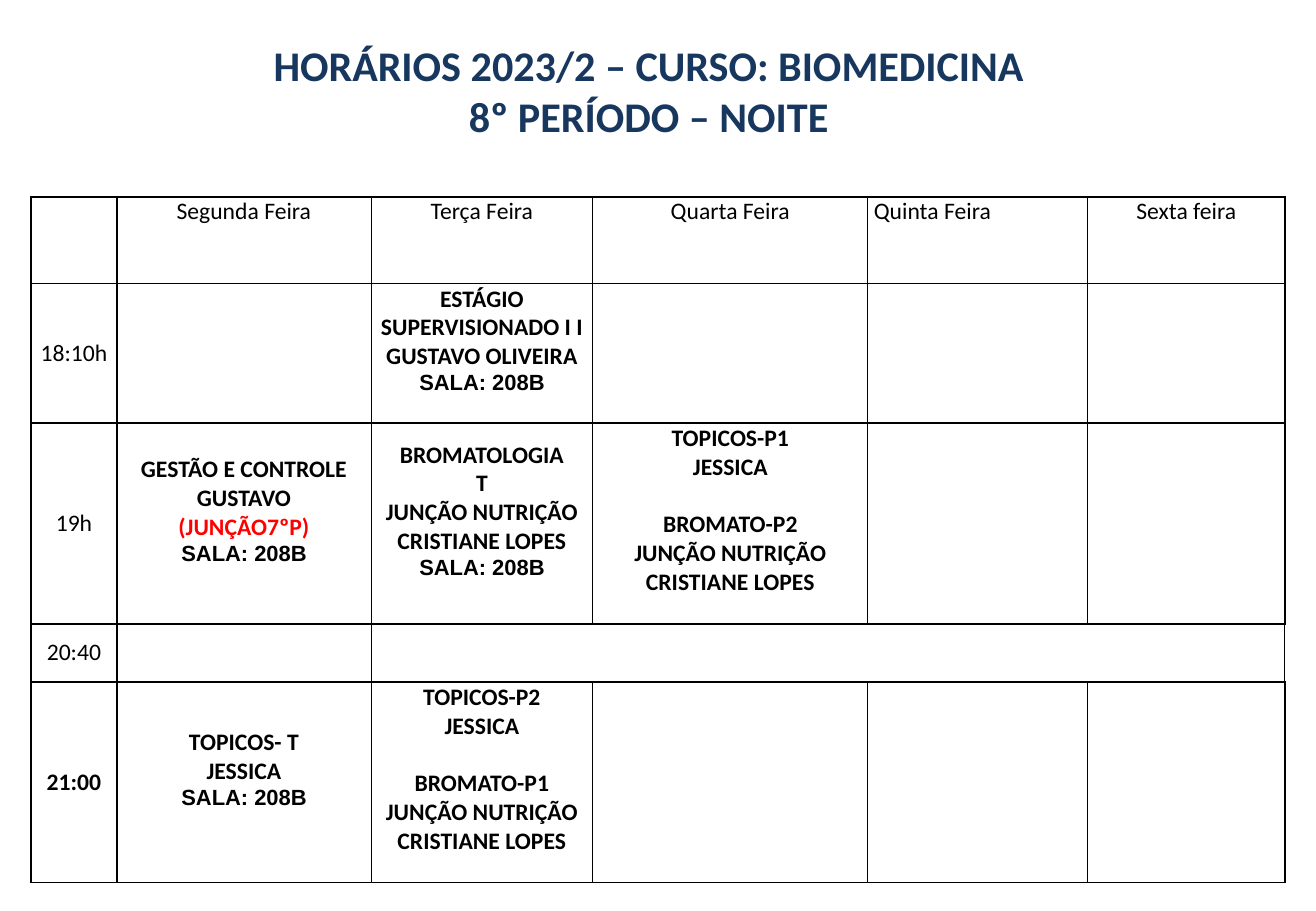
from dataclasses import dataclass

import pptx
import pptx.dml.color
import pptx.enum.text
import pptx.oxml
import pptx.oxml.ns
import pptx.util
from pptx.table import Table, _Cell

PX = 914400 / 121.5
NAVY = pptx.dml.color.RGBColor(0x17, 0x37, 0x5E)
BLACK = pptx.dml.color.RGBColor(0, 0, 0)
RED = pptx.dml.color.RGBColor(0xFF, 0, 0)
ALIGN = pptx.enum.text.PP_ALIGN
ANCHOR = pptx.enum.text.MSO_ANCHOR

COLUMN_WIDTHS = [86, 254, 222, 275, 220, 197]
ROW_HEIGHTS = [86, 140, 201, 58, 201]
THICK_COLUMN_EDGES = {0, 1, 6}
THICK_ROW_EDGES = {0, 2, 3, 4, 5}
THICK, THIN = 1.0, 0.5


@dataclass(frozen=True)
class Line:
    text: str
    font: str = "Calibri"
    size: int = 14
    color: pptx.dml.color.RGBColor = BLACK
    bold: bool = True
    gap: int = 0  # points before the line


@dataclass(frozen=True)
class Entry:
    row: int
    column: int
    lines: list[Line]
    align: ALIGN = ALIGN.CENTER
    anchor: ANCHOR = ANCHOR.MIDDLE
    bottom: int = 0  # px kept free below the text


def px(length: int) -> pptx.util.Emu:
    return pptx.util.Emu(round(length * PX))


def write(frame, lines: list[Line], align: ALIGN) -> None:
    frame.text = "\n".join(line.text for line in lines)
    for paragraph, line in zip(frame.paragraphs, lines):
        paragraph.alignment = align
        if line.gap:
            paragraph.space_before = pptx.util.Pt(line.gap)
        for run in paragraph.runs:
            run.font.name = line.font
            run.font.size = pptx.util.Pt(line.size)
            run.font.bold = line.bold
            run.font.color.rgb = line.color


def draw_borders(cell: _Cell, row: int, column: int) -> None:
    edges = [("L", column in THICK_COLUMN_EDGES), ("R", column + 1 in THICK_COLUMN_EDGES),
             ("T", row in THICK_ROW_EDGES), ("B", row + 1 in THICK_ROW_EDGES)]
    properties = cell._tc.get_or_add_tcPr()
    for index, (side, thick) in enumerate(edges):
        width = pptx.util.Pt(THICK if thick else THIN)
        properties.insert(index, pptx.oxml.parse_xml(
            f'<a:ln{side} {pptx.oxml.ns.nsdecls("a")} w="{width}"><a:solidFill>'
            f'<a:srgbClr val="{BLACK}"/></a:solidFill></a:ln{side}>'))


def fill_entry(timetable: Table, entry: Entry) -> None:
    cell = timetable.cell(entry.row, entry.column)
    cell.vertical_anchor = entry.anchor
    cell.margin_bottom = px(entry.bottom)
    write(cell.text_frame, entry.lines, entry.align)


# Timetable content
ROOM = Line("SALA: 208B", font="Arial", size=13)
JESSICA = Line("JESSICA")
NUTRITION = [Line("JUNÇÃO NUTRIÇÃO"), Line("CRISTIANE LOPES")]


def practical(topics: str, food: str) -> list[Line]:
    return [Line(f"TOPICOS-{topics}"), JESSICA, Line(f"BROMATO-{food}", gap=17), *NUTRITION]


DAYS = ["Segunda Feira", "Terça Feira", "Quarta Feira", "Quinta Feira", "Sexta feira"]
TIMES = ["18:10h", "19h", "20:40", "21:00"]
CLASSES = {
    (1, 2): [Line("ESTÁGIO SUPERVISIONADO I I"), Line("GUSTAVO OLIVEIRA"), ROOM],
    (2, 1): [Line("GESTÃO E CONTROLE"), Line("GUSTAVO"), Line("(JUNÇÃO7ºP)", color=RED), ROOM],
    (2, 2): [Line("BROMATOLOGIA"), Line("T"), *NUTRITION, ROOM],
    (2, 3): practical("P1", "P2"),
    (4, 1): [Line("TOPICOS- T"), JESSICA, ROOM],
    (4, 2): practical("P2", "P1"),
}
ENTRIES = [
    *(Entry(0, column, [Line(day, bold=False)], anchor=ANCHOR.TOP,
            align=ALIGN.LEFT if day == "Quinta Feira" else ALIGN.CENTER)
      for column, day in enumerate(DAYS, 1)),
    *(Entry(row, 0, [Line(time, bold=time == "21:00")]) for row, time in enumerate(TIMES, 1)),
    *(Entry(row, column, lines, bottom=26) for (row, column), lines in CLASSES.items()),
]


def main() -> None:
    presentation = pptx.Presentation()
    presentation.slide_width, presentation.slide_height = px(1316), px(911)
    slide = presentation.slides.add_slide(presentation.slide_layouts[5])

    # Title
    heading = slide.shapes.title
    heading.left, heading.top, heading.width, heading.height = px(36), px(33), px(1225), px(114)
    heading.text_frame.auto_size = pptx.enum.text.MSO_AUTO_SIZE.NONE
    heading.text_frame.word_wrap = True
    heading.text_frame.vertical_anchor = ANCHOR.MIDDLE
    write(heading.text_frame,
          [Line(text, size=25, color=NAVY)
           for text in ("HORÁRIOS 2023/2 – CURSO: BIOMEDICINA", "8º PERÍODO – NOITE")],
          ALIGN.CENTER)

    # Timetable grid
    timetable = slide.shapes.add_table(
        len(ROW_HEIGHTS), len(COLUMN_WIDTHS), px(31), px(197),
        px(sum(COLUMN_WIDTHS)), px(sum(ROW_HEIGHTS))).table
    timetable.first_row = timetable.horz_banding = False
    for column, width in zip(timetable.columns, COLUMN_WIDTHS):
        column.width = px(width)
    for row, height in zip(timetable.rows, ROW_HEIGHTS):
        row.height = px(height)
    for row in range(len(ROW_HEIGHTS)):
        for column in range(len(COLUMN_WIDTHS)):
            cell = timetable.cell(row, column)
            cell.fill.background()
            cell.margin_left = cell.margin_right = px(6)
            cell.margin_top = cell.margin_bottom = 0
            draw_borders(cell, row, column)

    # Break row and entries
    timetable.cell(3, 2).merge(timetable.cell(3, 5))
    for entry in ENTRIES:
        fill_entry(timetable, entry)

    presentation.save("out.pptx")


if __name__ == "__main__":
    main()
